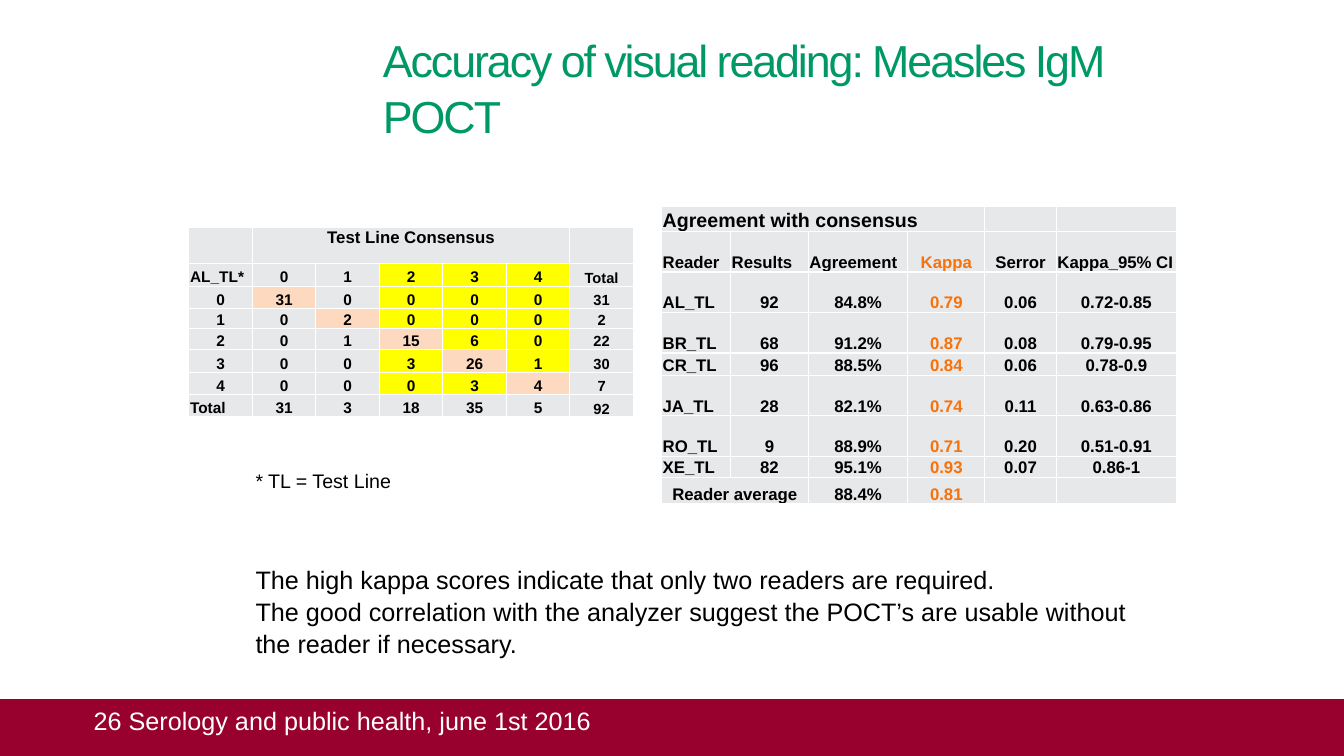
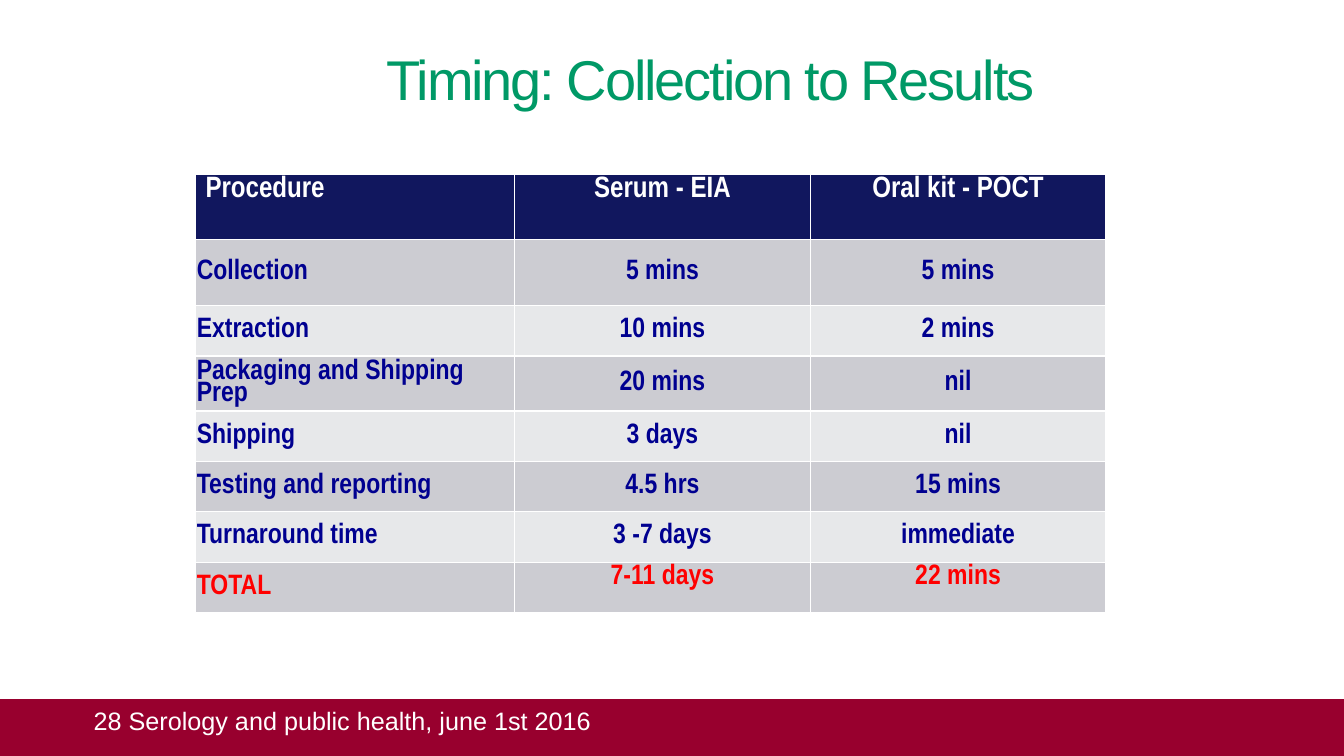
from lxml.etree import SubElement
from pptx import Presentation
from pptx.dml.color import RGBColor
from pptx.enum.shapes import MSO_SHAPE
from pptx.enum.text import MSO_ANCHOR, PP_ALIGN
from pptx.oxml.ns import qn
from pptx.util import Cm, Pt

COLORS = {
    "white": "FFFFFF", "black": "000000", "band": "98002E", "title": "009966",
    "grey": "E7E8EA", "dark grey": "CCCCD2", "yellow": "FFFF00",
    "peach": "FDDABF", "orange": "F6720B", "navy": "11175E",
    "blue": "000090", "red": "FF0000",
}
SLIDE_WIDTH, SLIDE_HEIGHT = 33.87, 19.05
BAND_TOP = 17.62
FOOTER = "Serology and public health, june 1st 2016"
TEXT_SPACING = 1.05

AGREEMENT = [
    ["Agreement with consensus", "", "", "", "", ""],
    ["Reader", "Results", "Agreement", "Kappa", "Serror", "Kappa_95% CI"],
    ["AL_TL", "92", "84.8%", "0.79", "0.06", "0.72-0.85"],
    ["BR_TL", "68", "91.2%", "0.87", "0.08", "0.79-0.95"],
    ["CR_TL", "96", "88.5%", "0.84", "0.06", "0.78-0.9"],
    ["JA_TL", "28", "82.1%", "0.74", "0.11", "0.63-0.86"],
    ["RO_TL", "9", "88.9%", "0.71", "0.20", "0.51-0.91"],
    ["XE_TL", "82", "95.1%", "0.93", "0.07", "0.86-1"],
    ["Reader average", "", "88.4%", "0.81", "", ""],
]
AGREEMENT_COLUMNS = [1.74, 1.96, 2.51, 1.94, 1.8, 3.03]
AGREEMENT_ROWS = [0.57, 1.02, 1.02, 1.02, 0.56, 1.02, 1.02, 0.53, 0.66]

CONSENSUS = [
    ["", "Test Line Consensus", "", "", "", "", ""],
    ["AL_TL*", "0", "1", "2", "3", "4", "Total"],
    ["0", "31", "0", "0", "0", "0", "31"],
    ["1", "0", "2", "0", "0", "0", "2"],
    ["2", "0", "1", "15", "6", "0", "22"],
    ["3", "0", "0", "3", "26", "1", "30"],
    ["4", "0", "0", "0", "3", "4", "7"],
    ["Total", "31", "3", "18", "35", "5", "92"],
]
CONSENSUS_COLUMNS = [1.6] * 7
CONSENSUS_ROWS = [0.9, 0.58, 0.56, 0.51, 0.53, 0.58, 0.56, 0.56]

TIMING = [
    ["Procedure", "Serum - EIA", "Oral kit - POCT"],
    ["Collection", "5 mins", "5 mins"],
    ["Extraction", "10 mins", "2 mins"],
    ["Packaging and Shipping Prep", "20 mins", "nil"],
    ["Shipping", "3 days", "nil"],
    ["Testing and reporting", "4.5 hrs", "15 mins"],
    ["Turnaround time", "3 -7 days", "immediate"],
    ["TOTAL", "7-11 days", "22 mins"],
]
TIMING_COLUMNS = [8.04, 7.45, 7.45]
TIMING_ROWS = [1.63, 1.67, 1.27, 1.36, 1.27, 1.27, 1.27, 1.27]

CONCLUSIONS = [
    "The high kappa scores indicate that only two readers are required.",
    "The good correlation with the analyzer suggest the POCT’s are usable "
    "without the reader if necessary.",
]


def rgb(name):
    return RGBColor.from_string(COLORS[name])


def format_runs(para, size, color, font="Arial", bold=False):
    for span in para.runs:
        span.font.name = font
        span.font.size = Pt(size)
        span.font.bold = bold
        span.font.color.rgb = rgb(color)


def add_text(page, place, lines, size, color="black", inset=None, tracking=0):
    box = page.shapes.add_textbox(*map(Cm, place))
    frame = box.text_frame
    frame.word_wrap = True
    if inset is not None:
        frame.margin_left = frame.margin_right = Cm(inset)
        frame.margin_top = frame.margin_bottom = Cm(inset)
    frame.text = "\n".join(lines)
    for para in frame.paragraphs:
        para.line_spacing = TEXT_SPACING
        format_runs(para, size, color)
        if tracking:
            for span in para.runs:
                span.font._element.set("spc", str(tracking))


def add_page(deck, number, title, title_place, title_size):
    """Add a blank page with the shared footer band and title style."""
    page = deck.slides.add_slide(deck.slide_layouts[6])
    band = page.shapes.add_shape(
        MSO_SHAPE.RECTANGLE, 0, Cm(BAND_TOP), Cm(SLIDE_WIDTH),
        Cm(SLIDE_HEIGHT - BAND_TOP))
    band.shadow.inherit = False
    band.fill.solid()
    band.fill.fore_color.rgb = rgb("band")
    band.line.color.rgb = rgb("band")
    band.line.width = Pt(0.75)
    frame = band.text_frame
    frame.vertical_anchor = MSO_ANCHOR.TOP
    frame.margin_left = Cm(2.36)
    frame.text = f"{number} {FOOTER}"
    para = frame.paragraphs[0]
    para.alignment = PP_ALIGN.LEFT
    para.line_spacing = TEXT_SPACING
    format_runs(para, 18, "white")
    add_text(page, title_place, [title], title_size, "title", 0, -150)
    return page


def set_borders(cell):
    properties = cell._tc.get_or_add_tcPr()
    for side in ("a:lnL", "a:lnR", "a:lnT", "a:lnB"):
        line = SubElement(properties, qn(side), w=str(Pt(1)))
        fill = SubElement(line, qn("a:solidFill"))
        SubElement(fill, qn("a:srgbClr"), val=COLORS["white"])


def add_grid(page, left, top, columns, heights, rows, look, spans=()):
    """Add a table; look(row, column) gives what differs from the plain cell."""
    table = page.shapes.add_table(
        len(rows), len(columns), Cm(left), Cm(top),
        Cm(sum(columns)), Cm(sum(heights))).table
    for column, width in zip(table.columns, columns):
        column.width = Cm(width)
    for row, height in zip(table.rows, heights):
        row.height = Cm(height)
    for r, texts in enumerate(rows):
        for c, text in enumerate(texts):
            style = {"fill": "grey", "color": "black", "size": 12,
                     "font": "Arial", "anchor": MSO_ANCHOR.BOTTOM,
                     "align": PP_ALIGN.CENTER, "spacing": 1.0,
                     "side": 0.03, "top": 0.03} | look(r, c)
            cell = table.cell(r, c)
            set_borders(cell)
            cell.fill.solid()
            cell.fill.fore_color.rgb = rgb(style["fill"])
            cell.vertical_anchor = style["anchor"]
            cell.margin_left = cell.margin_right = Cm(style["side"])
            cell.margin_top, cell.margin_bottom = Cm(style["top"]), 0
            para = cell.text_frame.paragraphs[0]
            para.text = text
            para.alignment = style["align"]
            para.line_spacing = style["spacing"]
            format_runs(para, style["size"], style["color"], style["font"], True)
            if not text:
                SubElement(para._p, qn("a:endParaRPr"), sz="1000")
    for r, first, last in spans:
        table.cell(r, first).merge(table.cell(r, last))


def agreement_look(r, c):
    style = {}
    if r == 0:
        style["size"] = 14
    if c == 3 and r > 0:
        style["color"] = "orange"
    if r == 0 or (c == 0 and r < 8) or (r == 1 and c in (1, 2, 5)):
        style["align"] = PP_ALIGN.LEFT
    return style


def consensus_look(r, c):
    if r == 0:
        return {"anchor": MSO_ANCHOR.TOP}
    style = {"size": 10.5 if c == 6 else 11}
    if c == 0 and r in (1, 7):
        style["align"] = PP_ALIGN.LEFT
    if r > 1 and c == r - 1 and c < 6:
        style["fill"] = "peach"
    elif 3 <= c <= 5 and r < 7:
        style["fill"] = "yellow"
    return style


def timing_look(r, c):
    header, total = r == 0, r == len(TIMING) - 1
    style = {"font": "Arial Narrow", "size": 20, "spacing": 0.8,
             "color": "red" if total else "blue",
             "fill": "dark grey" if r % 2 else "grey",
             "anchor": MSO_ANCHOR.MIDDLE}
    if c == 0:
        style["align"] = PP_ALIGN.LEFT
    if header:
        style |= {"size": 21, "color": "white", "fill": "navy"}
    if header or (total and c > 0):
        style |= {"anchor": MSO_ANCHOR.TOP, "side": 0.25, "top": 0.13}
    return style


def main():
    deck = Presentation()
    deck.slide_width, deck.slide_height = Cm(SLIDE_WIDTH), Cm(SLIDE_HEIGHT)

    page = add_page(deck, 26, "Accuracy of visual reading: Measles IgM POCT",
                    (9.65, 0.75, 19.5, 1.8), 32)
    add_grid(page, 16.67, 5.21, AGREEMENT_COLUMNS, AGREEMENT_ROWS, AGREEMENT,
             agreement_look, [(0, 0, 3), (8, 0, 1)])
    add_grid(page, 4.76, 5.73, CONSENSUS_COLUMNS, CONSENSUS_ROWS, CONSENSUS,
             consensus_look, [(0, 1, 5)])
    add_text(page, (6.19, 14.07, 22.6, 2.57), CONCLUSIONS, 18)
    add_text(page, (6.19, 11.66, 5.87, 0.86), ["* TL = Test Line"], 14)

    page = add_page(deck, 28, "Timing: Collection to Results",
                    (9.75, 1.03, 22.3, 1.8), 40)
    add_grid(page, 4.93, 4.4, TIMING_COLUMNS, TIMING_ROWS, TIMING, timing_look)

    deck.save("out.pptx")


if __name__ == "__main__":
    main()
